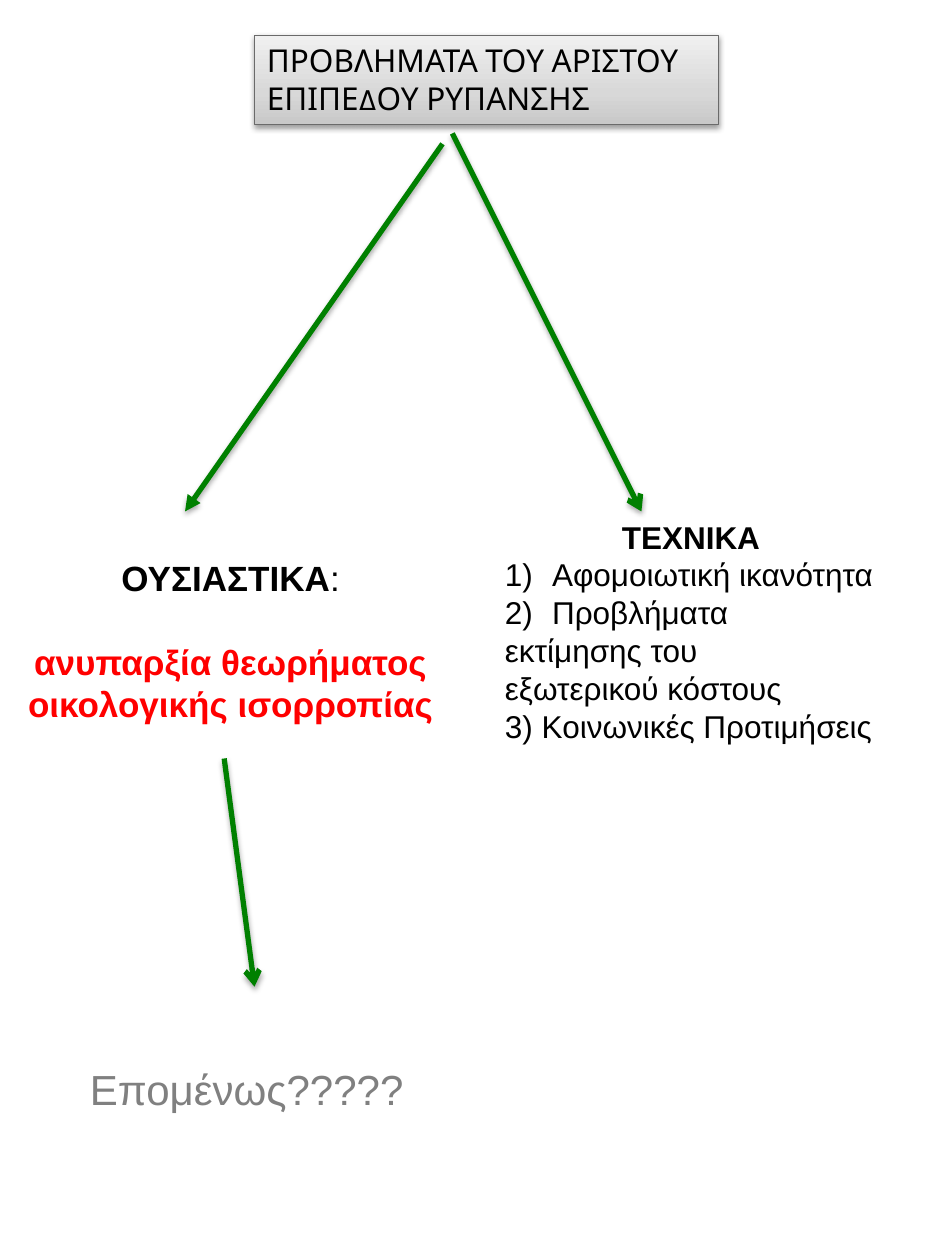
"""Build the slide on the problems of the optimal pollution level."""
from copy import deepcopy

from lxml import etree
from pptx import Presentation
from pptx.dml.color import RGBColor
from pptx.enum.shapes import MSO_CONNECTOR
from pptx.enum.text import MSO_AUTO_SIZE, PP_ALIGN
from pptx.oxml.ns import qn
from pptx.util import Cm, Pt

STRAIGHT = MSO_CONNECTOR.STRAIGHT
FIT_SHAPE = MSO_AUTO_SIZE.SHAPE_TO_FIT_TEXT
LEFT, CENTER = PP_ALIGN.LEFT, PP_ALIGN.CENTER
BLACK, RED, GRAY, GREEN = "000000", "FF0000", "808080", "008000"


def rgb(value):
    return RGBColor.from_string(value)


def add_shadow(item, distance, opacity):
    effects = etree.SubElement(item._element.spPr, qn("a:effectLst"))
    shadow = etree.SubElement(effects, qn("a:outerShdw"), blurRad=str(Pt(3.1)),
                              dist=str(Pt(distance)), dir="5400000", rotWithShape="0")
    color = etree.SubElement(shadow, qn("a:srgbClr"), val=BLACK)
    etree.SubElement(color, qn("a:alpha"), val=str(opacity * 1000))


prs = Presentation()
prs.slide_width, prs.slide_height = Cm(19.05), Cm(25.4)
slide = prs.slides.add_slide(prs.slide_layouts[6])

# position, font, size, paragraphs of (alignment, numbered, line spacing, runs)
topics = [
    ((5.13, 0.71, 9.35, 1.8), "Karla", 18, [
        (LEFT, False, 1, [("ΠΡΟΒΛΗΜΑΤΑ ΤΟΥ ΑΡΙΣΤΟΥ", BLACK, False)]),
        (LEFT, False, 1, [("ΕΠΙΠΕΔΟΥ ΡΥΠΑΝΣΗΣ", BLACK, False)]),
    ]),
    ((9.93, 10.31, 8, 4.88), "Arial", 18, [
        (CENTER, False, 1, [("ΤΕΧΝΙΚΑ", BLACK, True)]),
        (LEFT, True, 1, [("Αφομοιωτική ικανότητα", BLACK, False)]),
        (LEFT, True, 1, [("Προβλήματα", BLACK, False)]),
        (LEFT, False, 1, [("εκτίμησης του", BLACK, False)]),
        (LEFT, False, 1, [("εξωτερικού κόστους", BLACK, False)]),
        (LEFT, False, 1, [("3) Κοινωνικές Προτιμήσεις", BLACK, False)]),
    ]),
    ((0.28, 11.1, 8.74, 3.68), "Arial", 20, [
        (CENTER, False, 1, [("ΟΥΣΙΑΣΤΙΚΑ", BLACK, True), (":", BLACK, False)]),
        (CENTER, False, 2, [("ανυπαρξία θεωρήματος", RED, True)]),
        (CENTER, False, 1, [("οικολογικής ισορροπίας", RED, True)]),
    ]),
    ((1.52, 21.31, 6.91, 1.27), "Arial", 24, [
        (CENTER, False, 1, [("Επομένως?????", GRAY, False)]),
    ]),
]
topic_boxes = []
for place, font_name, size, paragraphs in topics:
    topic = slide.shapes.add_textbox(*map(Cm, place))
    topic_boxes.append(topic)
    frame = topic.text_frame
    frame.word_wrap = False
    frame.auto_size = FIT_SHAPE
    for index, (alignment, numbered, spacing, runs) in enumerate(paragraphs):
        paragraph = frame.add_paragraph() if index else frame.paragraphs[0]
        paragraph.alignment = alignment
        if spacing > 1:
            paragraph.line_spacing = float(spacing)
        if numbered:
            properties = paragraph._p.get_or_add_pPr()
            properties.set("marL", str(Cm(0.95)))
            properties.set("indent", str(Cm(-0.95)))
            etree.SubElement(properties, qn("a:buAutoNum"), type="arabicParenR")
        for text, color, bold in runs:
            run = paragraph.add_run()
            run.text = text
            run.font.name = font_name
            run.font.size = Pt(size)
            run.font.bold = bold
            run.font.color.rgb = rgb(color)

heading = topic_boxes[0]
heading.fill.gradient()
heading.fill.gradient_angle = 90
stop_list = heading._element.spPr.find(".//" + qn("a:gsLst"))
stop_list.insert(1, deepcopy(stop_list[0]))
for stop, position, color in zip(heading.fill.gradient_stops, (0, 0.35, 1),
                                 ("C8C8C8", "D8D8D8", "F0F0F0")):
    stop.position = position
    stop.color.rgb = rgb(color)
heading.line.color.rgb = rgb("6A6A6A")
heading.line.width = Pt(0.75)
add_shadow(heading, 1.6, 38)

for ends, arrowhead in [
    ((8.92, 2.9, 3.73, 10.31), "triangle"),
    ((9.12, 2.69, 12.93, 10.31), "arrow"),
    ((4.52, 15.29, 5.13, 19.89), "arrow"),
]:
    branch = slide.shapes.add_connector(STRAIGHT, *map(Cm, ends))
    branch.line.color.rgb = rgb(GREEN)
    branch.line.width = Pt(3)
    etree.SubElement(branch._element.spPr.find(qn("a:ln")), qn("a:tailEnd"), type=arrowhead)
    add_shadow(branch, 1.8, 35)

prs.save("out.pptx")
